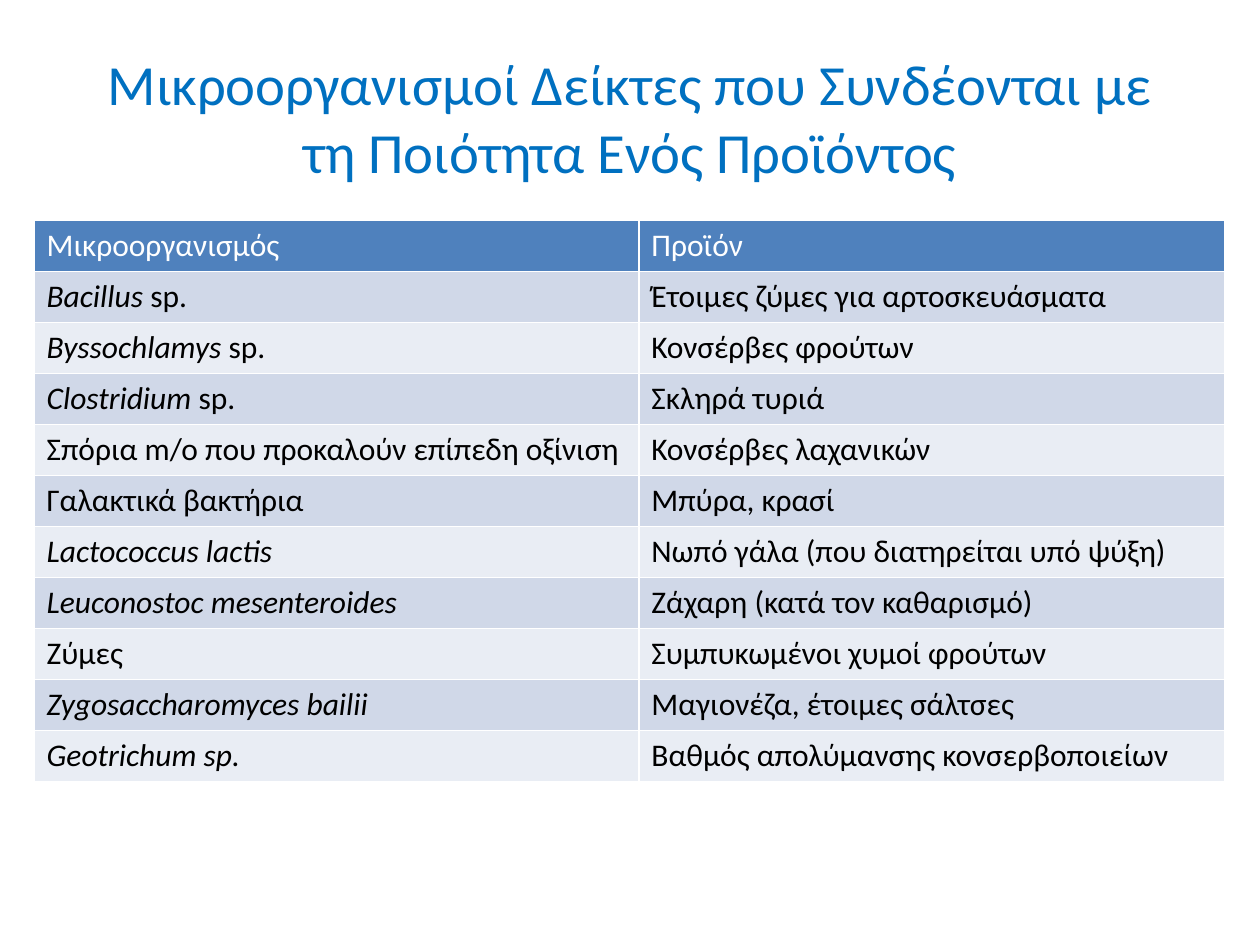
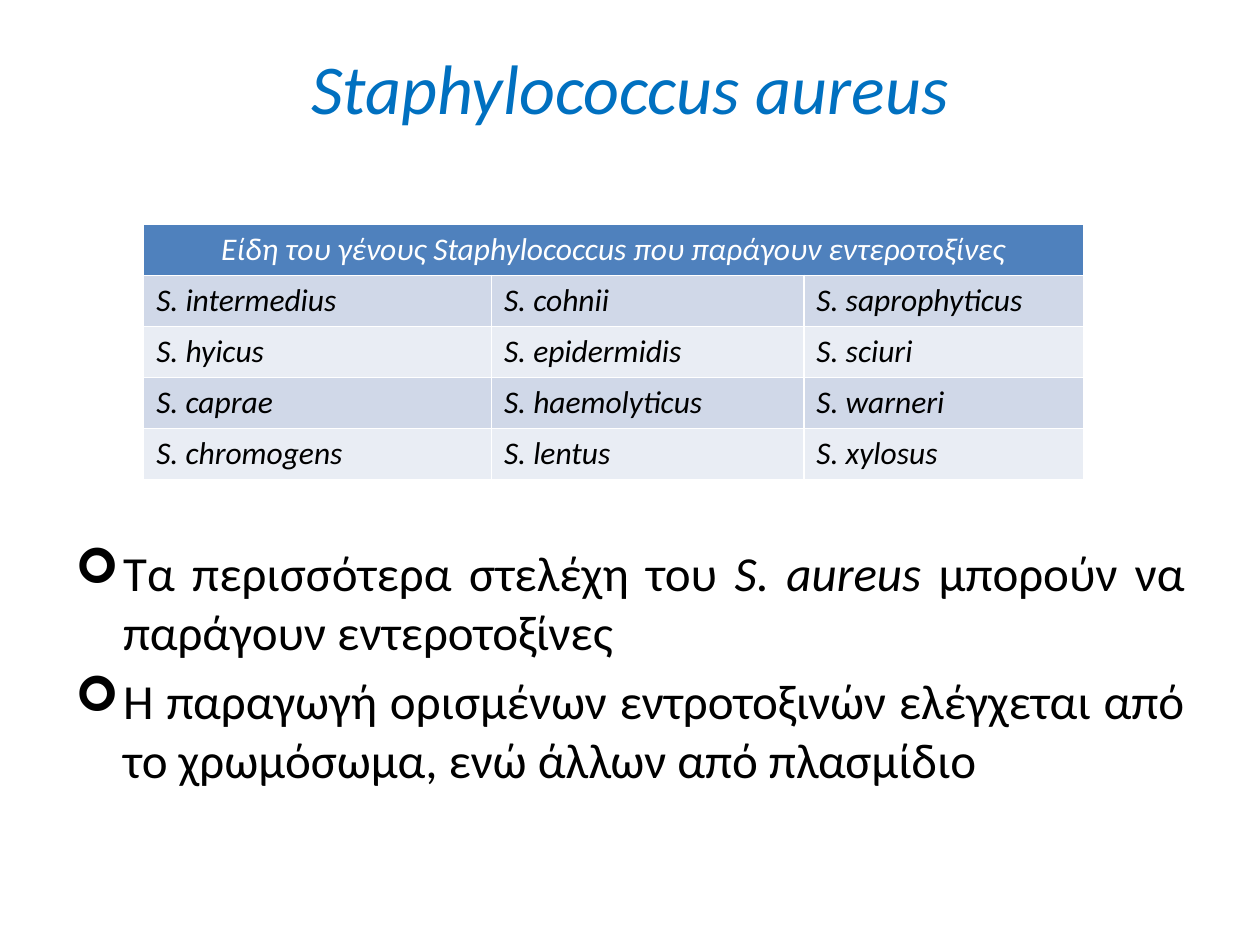
from lxml import etree
from pptx import Presentation
from pptx.dml.color import RGBColor
from pptx.enum.text import MSO_ANCHOR, PP_ALIGN
from pptx.oxml.ns import qn
from pptx.util import Inches, Pt

FONT = "Calibri"
COLORS = {
    "title": "0070C0",
    "header": "4F81BD",
    "header_text": "FFFFFF",
    "bands": ("D0D8E8", "E9EDF4"),
    "text": "000000",
}
ROW_HEIGHT = 0.405

# Text between asterisks is set in italics.
INDICATOR_TITLE = "Μικροοργανισμοί Δείκτες που Συνδέονται με τη Ποιότητα Ενός Προϊόντος"
INDICATOR_ROWS = [
    ("Μικροοργανισμός", "Προϊόν"),
    ("*Bacillus* sp.", "Έτοιμες ζύμες για αρτοσκευάσματα"),
    ("*Byssochlamys* sp.", "Κονσέρβες φρούτων"),
    ("*Clostridium* sp.", "Σκληρά τυριά"),
    ("Σπόρια m/o που προκαλούν επίπεδη οξίνιση", "Κονσέρβες λαχανικών"),
    ("Γαλακτικά βακτήρια", "Μπύρα, κρασί"),
    ("*Lactococcus lactis*", "Νωπό γάλα (που διατηρείται υπό ψύξη)"),
    ("*Leuconostoc mesenteroides*", "Ζάχαρη (κατά τον καθαρισμό)"),
    ("Ζύμες", "Συμπυκωμένοι χυμοί φρούτων"),
    ("*Zygosaccharomyces bailii*", "Μαγιονέζα, έτοιμες σάλτσες"),
    ("*Geotrichum sp.*", "Βαθμός απολύμανσης κονσερβοποιείων"),
]

SPECIES_TITLE = "*Staphylococcus aureus*"
SPECIES_HEADER = "*Είδη του γένους Staphylococcus που παράγουν εντεροτοξίνες*"
SPECIES = [
    ("intermedius", "cohnii", "saprophyticus"),
    ("hyicus", "epidermidis", "sciuri"),
    ("caprae", "haemolyticus", "warneri"),
    ("chromogens", "lentus", "xylosus"),
]
TOXIN_POINTS = [
    "Τα περισσότερα στελέχη του *S. aureus *μπορούν να παράγουν εντεροτοξίνες",
    "Η παραγωγή ορισμένων εντροτοξινών ελέγχεται από το χρωμόσωμα, ενώ άλλων από πλασμίδιο",
]


def write(paragraph, marked_text, size, color, align=PP_ALIGN.LEFT):
    paragraph.alignment = align
    for index, part in enumerate(marked_text.split("*")):
        if not part:
            continue
        run = paragraph.add_run()
        run.text = part
        run.font.name = FONT
        run.font.size = Pt(size)
        run.font.bold = False
        run.font.italic = index % 2 == 1
        run.font.color.rgb = RGBColor.from_string(color)


def add_text_frame(slide, left, top, width, height):
    box = slide.shapes.add_textbox(*map(Inches, (left, top, width, height)))
    box.text_frame.word_wrap = True
    return box.text_frame


def add_title(slide, text, size, height):
    text_frame = add_text_frame(slide, 0.5, 0.3, 9, height)
    text_frame.vertical_anchor = MSO_ANCHOR.MIDDLE
    write(text_frame.paragraphs[0], text, size, COLORS["title"], PP_ALIGN.CENTER)


def add_banded_table(slide, rows, left, top, widths, header_align=PP_ALIGN.LEFT):
    """A header that is shorter than the other rows spans the whole table."""
    table = slide.shapes.add_table(
        len(rows), len(widths), Inches(left), Inches(top),
        Inches(sum(widths)), Inches(ROW_HEIGHT * len(rows))).table
    for column, width in zip(table.columns, widths):
        column.width = Inches(width)
    if len(rows[0]) < len(widths):
        table.cell(0, 0).merge(table.cell(0, len(widths) - 1))
    for row_index, row in enumerate(rows):
        table.rows[row_index].height = Inches(ROW_HEIGHT)
        if row_index == 0:
            fill, color, align = COLORS["header"], COLORS["header_text"], header_align
        else:
            fill, color, align = COLORS["bands"][(row_index - 1) % 2], COLORS["text"], PP_ALIGN.LEFT
        for column_index, text in enumerate(row):
            cell = table.cell(row_index, column_index)
            cell.fill.solid()
            cell.fill.fore_color.rgb = RGBColor.from_string(fill)
            write(cell.text_frame.paragraphs[0], text, 18, color, align)


def add_bullets(slide, points, left, top, width, height):
    text_frame = add_text_frame(slide, left, top, width, height)
    for index, point in enumerate(points):
        paragraph = text_frame.add_paragraph() if index else text_frame.paragraphs[0]
        write(paragraph, point, 28, COLORS["text"], PP_ALIGN.JUSTIFY)
        if index:
            paragraph.space_before = Pt(5.6)
        properties = paragraph._p.get_or_add_pPr()
        properties.set("marL", str(Inches(0.38)))
        properties.set("indent", str(-Inches(0.38)))
        etree.SubElement(properties, qn("a:buFont"), typeface="Wingdings")
        etree.SubElement(properties, qn("a:buChar"), char="➢")


def main():
    presentation = Presentation()
    presentation.slide_width, presentation.slide_height = Inches(10), Inches(7.5)
    blank = presentation.slide_layouts[6]

    slide = presentation.slides.add_slide(blank)
    add_title(slide, INDICATOR_TITLE, 32.4, 1.25)
    add_banded_table(slide, INDICATOR_ROWS, 0.27, 1.75, (4.8, 4.65))

    slide = presentation.slides.add_slide(blank)
    add_title(slide, SPECIES_TITLE, 40, 0.77)
    add_bullets(slide, TOXIN_POINTS, 0.5, 4.26, 9, 2.44)
    species_rows = [tuple(f"*S. {name}*" for name in row) for row in SPECIES]
    add_banded_table(slide, [(SPECIES_HEADER,)] + species_rows, 1.14, 1.78,
                     (2.76, 2.48, 2.22), PP_ALIGN.CENTER)

    presentation.save("out.pptx")


if __name__ == "__main__":
    main()
